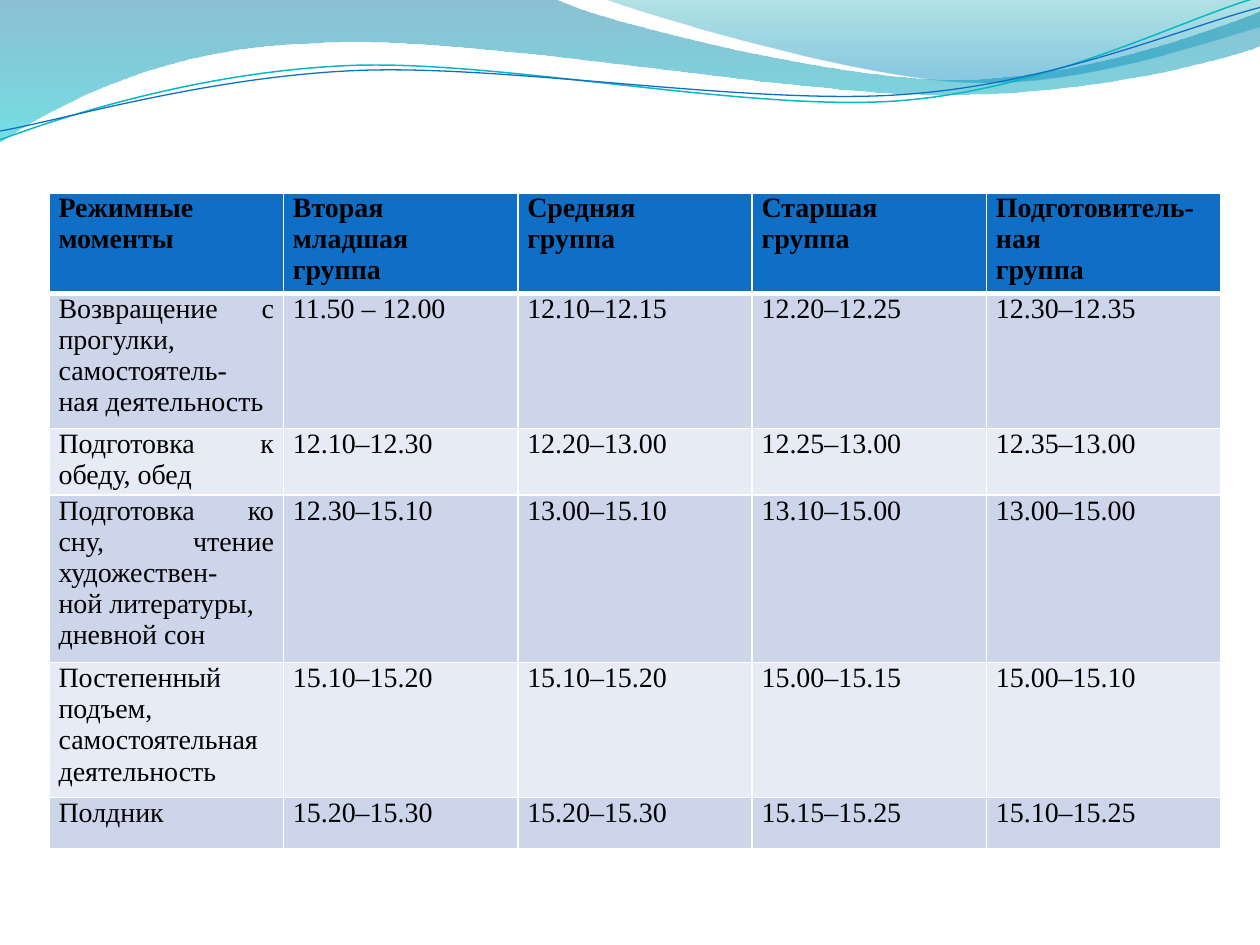
from math import cos, radians, sin

from pptx import Presentation
from pptx import util as u
from pptx.dml.color import RGBColor
from pptx.enum import text
from pptx.oxml.ns import qn
from lxml import etree

# Each wave is a list of points; six numbers make a cubic curve, two a straight line.
BAND = [(0, 0), (4.4, -0.01), (4.76, 0.17, 6.64, 0.63, 7.58, 0.63),
        (8.53, 0.63, 9.58, 0.26, 10, 0.09), (10.01, 0.36),
        (9.83, 0.44, 8.7, 0.76, 7.46, 0.75), (6.22, 0.75, 3.82, 0.28, 2.57, 0.34),
        (1.29, 0.36, 0.46, 0.83, -0.01, 1.13), (0, 0)]
CREST = [(4.79, -0.01), (5.09, 0.11, 6.82, 0.62, 7.69, 0.65),
         (8.56, 0.69, 9.61, 0.32, 10, 0.21), (10, 0), (4.79, -0.01)]
TEAL = [(0, 1.11), (0.48, 0.93, 1.58, 0.57, 2.77, 0.52),
        (3.95, 0.47, 5.93, 0.89, 7.13, 0.8), (8.33, 0.71, 9.38, 0.15, 9.98, -0.02)]
BLUE = [(0, 1.04), (0.47, 0.96, 1.64, 0.61, 2.83, 0.56),
        (4.03, 0.51, 5.97, 0.84, 7.17, 0.75), (8.36, 0.67, 9.41, 0.21, 10, 0.06)]
TILT = 2.7

HEAD = ["Режимные\nмоменты", "Вторая\nмладшая\nгруппа", "Средняя\nгруппа",
        "Старшая\nгруппа", "Подготовитель-ная\nгруппа"]
ROWS = [
    ["Возвращение с прогулки, самостоятель-\nная деятельность",
     "11.50 – 12.00", "12.10–12.15", "12.20–12.25", "12.30–12.35"],
    ["Подготовка к обеду, обед",
     "12.10–12.30", "12.20–13.00", "12.25–13.00", "12.35–13.00"],
    ["Подготовка ко сну, чтение художествен-\nной литературы,\nдневной сон",
     "12.30–15.10", "13.00–15.10", "13.10–15.00", "13.00–15.00"],
    ["Постепенный подъем, самостоятельная\nдеятельность",
     "15.10–15.20", "15.10–15.20", "15.00–15.15", "15.00–15.10"],
    ["Полдник", "15.20–15.30", "15.20–15.30", "15.15–15.25", "15.10–15.25"],
]
HEIGHTS = [0.8, 1.07, 0.53, 1.33, 1.07, 0.41]


def color(code):
    return RGBColor.from_string(code)


def turn(path, angle, mid):
    """Turn every point of a path clockwise about mid."""
    c, s = cos(radians(angle)), sin(radians(angle))
    turned = []
    for part in path:
        spots = [(x - mid[0], y - mid[1]) for x, y in zip(part[::2], part[1::2])]
        turned.append(tuple(n for x, y in spots
                            for n in (mid[0] + x * c - y * s, mid[1] + x * s + y * c)))
    return turned


def outline(slide, left, top, path, close):
    """Draw through all points, then join each three of a curve into one cubic."""
    spots = [(left + u.Inches(x), top + u.Inches(y))
             for part in path for x, y in zip(part[::2], part[1::2])]
    pen = slide.shapes.build_freeform(*spots[0])
    pen.add_line_segments(spots[1:], close=close)
    shape = pen.convert_to_shape()
    shape.shadow.inherit = False
    lines = iter(list(shape._element.iter(qn("a:lnTo"))))
    for part in path[1:]:
        group = [next(lines) for _ in range(len(part) // 2)]
        if len(group) == 3:
            cubic = etree.Element(qn("a:cubicBezTo"))
            group[0].addprevious(cubic)
            for line in group:
                cubic.append(line[0])
                line.getparent().remove(line)
    return shape


def fade(shape, stops):
    """Fill from top to bottom with stops of place, colour and opacity in percent."""
    shape.line.fill.background()
    shape.fill.gradient()
    shape.fill.gradient_angle = 270
    for stop, (place, code, _) in zip(shape.fill.gradient_stops, stops):
        stop.position = place
        stop.color.rgb = color(code)
    tints = shape._element.spPr.iter(qn("a:srgbClr"))
    for tint, (_, _, alpha) in zip(tints, stops):
        etree.SubElement(tint, qn("a:alpha"), val=str(alpha * 1000))


def add_waves(slide, left, top):
    fade(outline(slide, left, top, BAND, True),
         [(0, "0074A1", 45), (1, "00C6CF", 55)])
    fade(outline(slide, left, top, CREST, True),
         [(0, "00A1A9", 30), (0.8, "008BBF", 45)])
    for path, mid, code, width in [(TEAL, (4.99, 0.58), "0AB8BF", 0.85),
                                   (BLUE, (5, 0.59), "0F6FC6", 0.75)]:
        curve = outline(slide, left, top, turn(path, TILT, mid), False)
        curve.rotation = -TILT
        curve.fill.background()
        curve.line.color.rgb = color(code)
        curve.line.width = u.Pt(width)


def add_edges(cell, code, widths):
    """Draw the left, right, top and bottom borders, with widths in points."""
    props = cell._tc.get_or_add_tcPr()
    for i, (side, width) in enumerate(zip("LRTB", widths)):
        edge = etree.Element(qn(f"a:ln{side}"), w=str(u.Pt(width)))
        fill = etree.SubElement(edge, qn("a:solidFill"))
        etree.SubElement(fill, qn("a:srgbClr"), val=code)
        props.insert(i, edge)


def fill_cell(cell, words, back, bold):
    cell.fill.solid()
    cell.fill.fore_color.rgb = color(back)
    cell.margin_left = cell.margin_right = u.Pt(5.4)
    cell.margin_top = cell.margin_bottom = 0
    cell.text = words
    for para in cell.text_frame.paragraphs:
        para.alignment = text.PP_ALIGN.JUSTIFY
        font = para.font
        font.name, font.size, font.bold = "Times New Roman", u.Pt(16), bold
        font.color.rgb = color("000000")


def add_schedule(slide, left, top, width):
    rows = [HEAD] + ROWS
    height = u.Inches(sum(HEIGHTS))
    table = slide.shapes.add_table(len(rows), len(HEAD), left, top, width, height).table
    for col in table.columns:
        col.width = width // len(HEAD)
    for i, (row, tall) in enumerate(zip(rows, HEIGHTS)):
        table.rows[i].height = u.Inches(tall)
        back = "0F6FC6" if i == 0 else ("E7EBF5", "CCD5EA")[i % 2]
        for j, words in enumerate(row):
            cell = table.cell(i, j)
            fill_cell(cell, words, back, i == 0)
            add_edges(cell, "FFFFFF", (1, 1, 3 if i == 1 else 1, 3 if i == 0 else 1))


def main():
    deck = Presentation()
    deck.slide_width, deck.slide_height = u.Inches(10), u.Inches(7.5)
    slide = deck.slides.add_slide(deck.slide_layouts[6])
    add_waves(slide, 0, 0)
    add_schedule(slide, u.Inches(0.39), u.Inches(1.53), u.Inches(9.3))
    deck.save("out.pptx")


if __name__ == "__main__":
    main()
